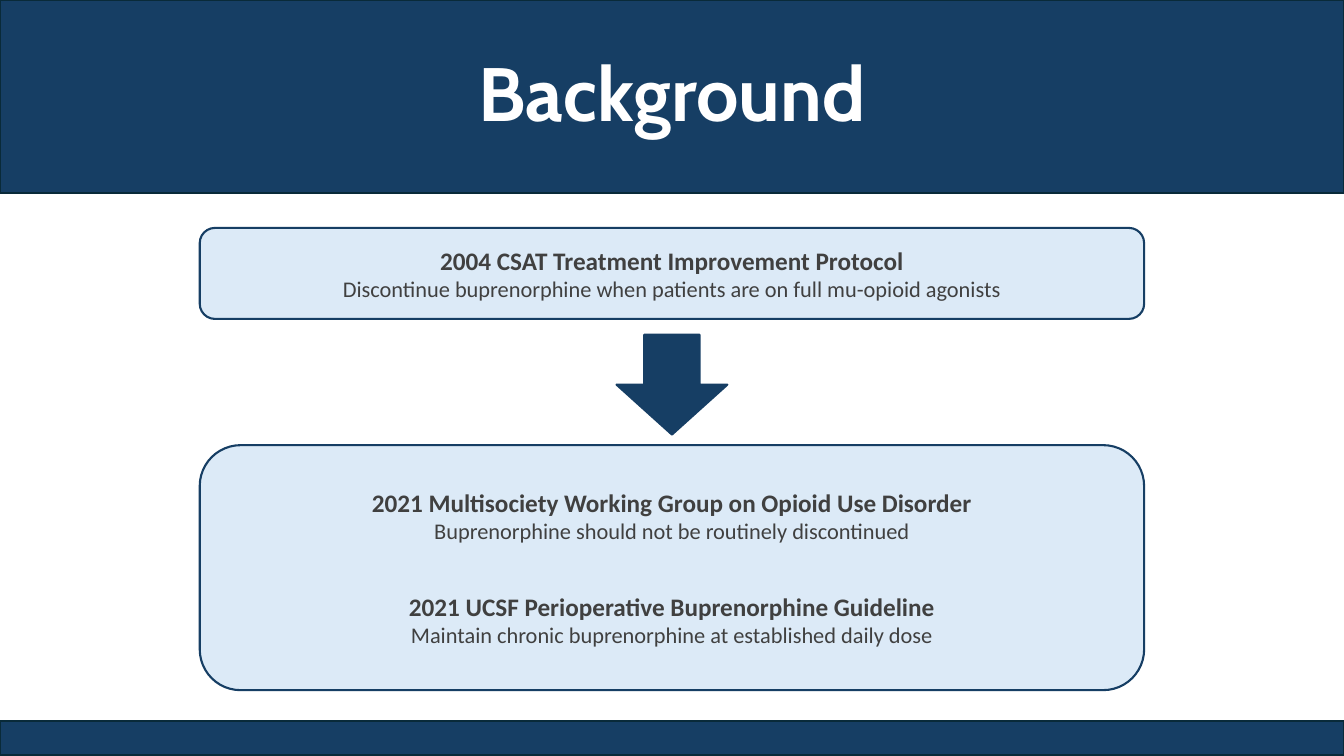
from pptx import Presentation
from pptx.dml.color import RGBColor
from pptx.enum.shapes import MSO_SHAPE as SHAPE
from pptx.enum.text import MSO_ANCHOR as ANCHOR, PP_ALIGN as ALIGN
from pptx.util import Pt

COLORS = {
    "navy": "163E64",
    "edge": "092A39",
    "pale": "DCEAF7",
    "text": "404040",
    "white": "FFFFFF",
}
WIDTH, HEIGHT = 960, 540
CARD_WIDTH = 674.6
ENTRY_GAP = 33.5


def color(name):
    return RGBColor.from_string(COLORS[name])


def add_box(slide, kind, box, fill, line):
    sp = slide.shapes.add_shape(kind, *(Pt(v) for v in box))
    sp.shadow.inherit = False
    sp.fill.solid()
    sp.fill.fore_color.rgb = color(fill)
    sp.line.color.rgb = color(line)
    sp.line.width = Pt(1.5)
    return sp


def format_line(p, font, size, fill, bold):
    p.alignment = ALIGN.CENTER
    for r in p.runs:
        r.font.name = font
        r.font.size = Pt(size)
        r.font.color.rgb = color(fill)
        r.font.bold = bold


def add_header(slide, box, title):
    add_box(slide, SHAPE.RECTANGLE, box, "navy", "edge")
    left, top, width, height = box
    title_width = 720
    sp = slide.shapes.add_textbox(
        Pt(left + (width - title_width) / 2), Pt(top + 36),
        Pt(title_width), Pt(66.2))
    tf = sp.text_frame
    tf.word_wrap = True
    tf.vertical_anchor = ANCHOR.BOTTOM
    tf.text = title
    p = tf.paragraphs[0]
    p.line_spacing = 0.9
    format_line(p, "Cabin", 54, "white", True)


def add_card(slide, box, entries):
    sp = add_box(slide, SHAPE.ROUNDED_RECTANGLE, box, "pale", "navy")
    tf = sp.text_frame
    tf.word_wrap = True
    tf.vertical_anchor = ANCHOR.MIDDLE
    tf.text = "\n".join(line for entry in entries for line in entry)
    for i, p in enumerate(tf.paragraphs):
        heading = i % 2 == 0
        format_line(p, "Calibri", 18 if heading else 16, "text", heading)
        if heading and i:
            p.space_before = Pt(ENTRY_GAP)


def add_flow(slide, box):
    left, top, width, height = box
    first_height, last_height = 65, 175
    arrow_width, arrow_height = 79.2, 71.3
    add_card(slide, (left, top, width, first_height), [
        ("2004 CSAT Treatment Improvement Protocol",
         "Discontinue buprenorphine when patients are on full mu-opioid agonists"),
    ])
    add_box(slide, SHAPE.DOWN_ARROW,
            (left + (width - arrow_width) / 2, top + first_height + 11.3,
             arrow_width, arrow_height), "navy", "navy")
    add_card(slide, (left, top + height - last_height, width, last_height), [
        ("2021 Multisociety Working Group on Opioid Use Disorder",
         "Buprenorphine should not be routinely discontinued"),
        ("2021 UCSF Perioperative Buprenorphine Guideline",
         "Maintain chronic buprenorphine at established daily dose"),
    ])


def main():
    prs = Presentation()
    prs.slide_width, prs.slide_height = Pt(WIDTH), Pt(HEIGHT)
    slide = prs.slides.add_slide(prs.slide_layouts[6])
    add_header(slide, (0, 0, WIDTH, 137.6), "Background")
    add_box(slide, SHAPE.RECTANGLE, (0, 515, WIDTH, 24.5), "navy", "edge")
    add_flow(slide, ((WIDTH - CARD_WIDTH) / 2, 162.8, CARD_WIDTH, 330.2))
    prs.save("out.pptx")


if __name__ == "__main__":
    main()
